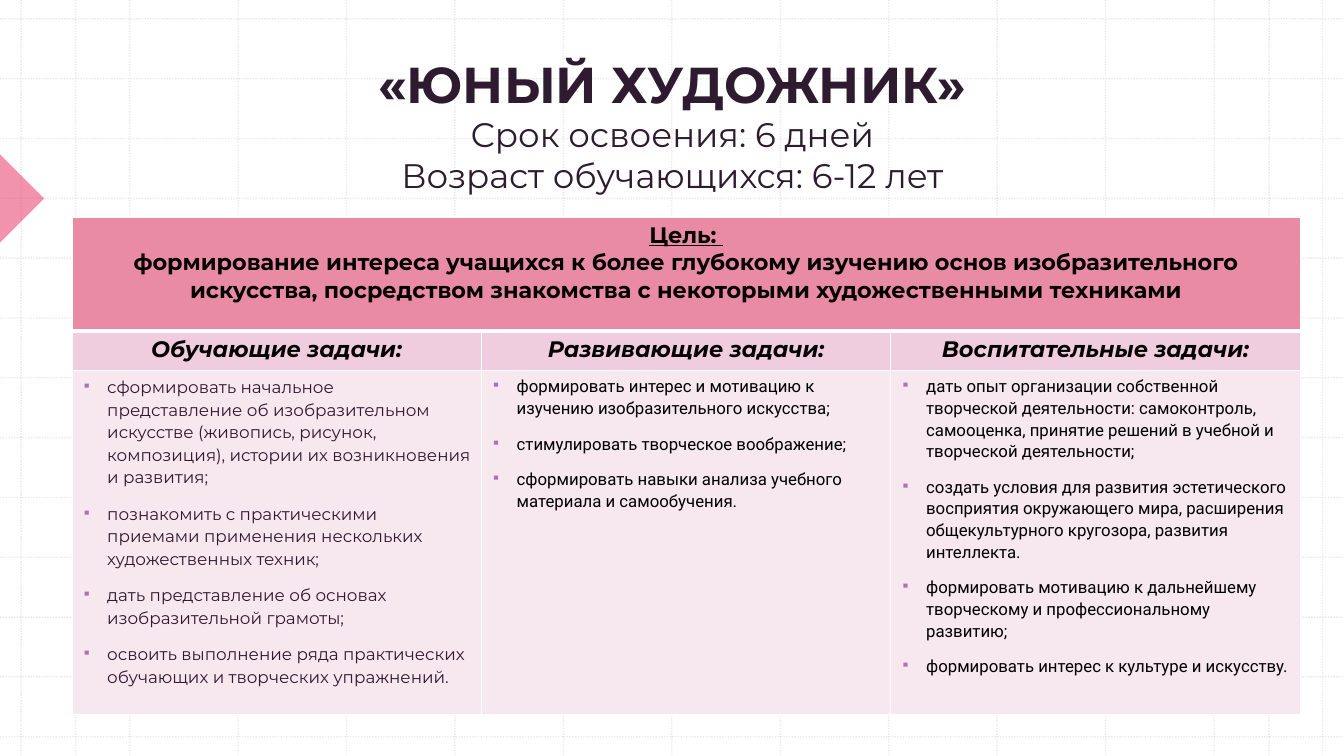
from pptx import Presentation
from pptx.dml.color import RGBColor
from pptx.enum.dml import MSO_LINE
from pptx.enum.shapes import MSO_CONNECTOR, MSO_SHAPE
from pptx.enum.text import MSO_ANCHOR, PP_ALIGN
from pptx.oxml import parse_xml
from pptx.oxml.ns import qn
from pptx.util import Pt
from lxml.etree import SubElement

NS = 'xmlns:a="http://schemas.openxmlformats.org/drawingml/2006/main"'
W, H = 960, 540
DARK = "2E1B30"


def rgb(color):
    return RGBColor.from_string(color)


def write(tf, text, size=16, font="Montserrat", color="000000", bold=False,
          italic=False, underline=False, align=PP_ALIGN.CENTER, bullet=False):
    p = tf.paragraphs[0] if not tf.paragraphs[0].runs else tf.add_paragraph()
    p.alignment = align
    p.line_spacing = 1.1 if bullet else 1.0
    p.space_before = Pt(10 if bullet else 0)
    if bullet:
        pPr = p._p.get_or_add_pPr()
        pPr.set("marL", str(Pt(18)))
        pPr.set("indent", str(Pt(-18)))
        for xml in (f'<a:buClr {NS}><a:srgbClr val="AB74B1"/></a:buClr>',
                    f'<a:buSzPct {NS} val="75000"/>',
                    f'<a:buChar {NS} char="▪"/>'):
            pPr.append(parse_xml(xml))
    r = p.add_run()
    r.text = text
    f = r.font
    f.size, f.name, f.color.rgb = Pt(size), font, rgb(color)
    f.bold, f.italic, f.underline = bold, italic, underline


prs = Presentation()
prs.slide_width, prs.slide_height = Pt(W), Pt(H)
s = prs.slides.add_slide(prs.slide_layouts[5])

# Background grid
columns = [15.1 + 77.46 * i for i in range(13)] + [54, 906.5]
rows = [13.5 + 42.73 * i for i in range(13)]
grid = [(x, 0, x, H) for x in columns] + [(0, y, W, y) for y in rows]
for ends in grid:
    ln = s.shapes.add_connector(MSO_CONNECTOR.STRAIGHT, *[Pt(v) for v in ends])
    ln.line.color.rgb = rgb("BCBCBC")
    ln.line.width = Pt(1)
    ln.line.dash_style = MSO_LINE.ROUND_DOT
    clr = ln._element.spPr.find(".//" + qn("a:srgbClr"))
    SubElement(clr, qn("a:alpha"), val="30000")
    SubElement(ln._element.spPr, qn("a:effectLst"))

# Pointer at the left edge
sp = s.shapes.add_shape(MSO_SHAPE.RIGHT_TRIANGLE, Pt(-22.3), Pt(119.5), Pt(44.6), Pt(44.6))
sp.rotation = 225
sp.shadow.inherit = False
sp.fill.solid()
sp.fill.fore_color.rgb = rgb("E7295E")
SubElement(sp._element.spPr.find(".//" + qn("a:srgbClr")), qn("a:alpha"), val="50000")
sp.line.fill.background()

# Title, brought in front of the grid
title = s.shapes.title
title._element.getparent().append(title._element)
title.left, title.top, title.width, title.height = Pt(16.5), Pt(34.5), Pt(927.5), Pt(112)
tf = title.text_frame
tf.word_wrap = True
tf.vertical_anchor = MSO_ANCHOR.TOP
write(tf, "«ЮНЫЙ ХУДОЖНИК»", size=36, color=DARK, bold=True)
for text in ("Срок освоения: 6 дней", "Возраст обучающихся: 6-12 лет"):
    write(tf, text, size=24.3, color=DARK)

# Goal and tasks
goal = ("формирование интереса учащихся к более глубокому изучению основ изобразительного "
        "искусства, посредством знакомства с некоторыми художественными техниками")
tasks = [
    ("Обучающие задачи:", "Montserrat", DARK, [
        "сформировать начальное представление об изобразительном искусстве "
        "(живопись, рисунок, композиция), истории их возникновения и развития;",
        "познакомить с практическими приемами применения нескольких художественных техник;",
        "дать представление об основах изобразительной грамоты;",
        "освоить выполнение ряда практических обучающих и творческих упражнений."]),
    ("Развивающие задачи:", "Roboto", "000000", [
        "формировать интерес и мотивацию к изучению изобразительного искусства;",
        "стимулировать творческое воображение;",
        "сформировать навыки анализа учебного материала и самообучения."]),
    ("Воспитательные задачи:", "Roboto", "000000", [
        "дать опыт организации собственной творческой деятельности: самоконтроль, "
        "самооценка, принятие решений в учебной и творческой деятельности;",
        "создать условия для развития эстетического восприятия окружающего мира, "
        "расширения общекультурного кругозора, развития интеллекта.",
        "формировать мотивацию к дальнейшему творческому и профессиональному развитию;",
        "формировать интерес к культуре и искусству."]),
]
row_heights = [81.3, 28.1, 246]
row_fills = ["EA8BA5", "EFCCDE", "F7E8EF"]
table = s.shapes.add_table(3, 3, Pt(51.4), Pt(155), Pt(877.5), Pt(sum(row_heights))).table
for col in table.columns:
    col.width = Pt(292.5)
for i, (height, fill) in enumerate(zip(row_heights, row_fills)):
    table.rows[i].height = Pt(height)
    for cell in table.rows[i].cells:
        cell.fill.solid()
        cell.fill.fore_color.rgb = rgb(fill)
        widths = {"L": 1, "R": 1, "T": 3 if i == 1 else 1, "B": 3 if i == 0 else 1}
        for n, (side, width) in enumerate(widths.items()):
            cell._tc.tcPr.insert(n, parse_xml(
                f'<a:ln{side} {NS} w="{Pt(width)}"><a:solidFill>'
                f'<a:srgbClr val="FFFFFF"/></a:solidFill></a:ln{side}>'))

table.cell(0, 0).merge(table.cell(0, 2))
tf = table.cell(0, 0).text_frame
write(tf, "Цель: ", bold=True, underline=True)
write(tf, goal, bold=True)
for j, (heading, font, color, items) in enumerate(tasks):
    write(table.cell(1, j).text_frame, heading, bold=True, italic=True)
    for item in items:
        write(table.cell(2, j).text_frame, item, size=12, font=font, color=color,
              align=PP_ALIGN.LEFT, bullet=True)

prs.save("out.pptx")
